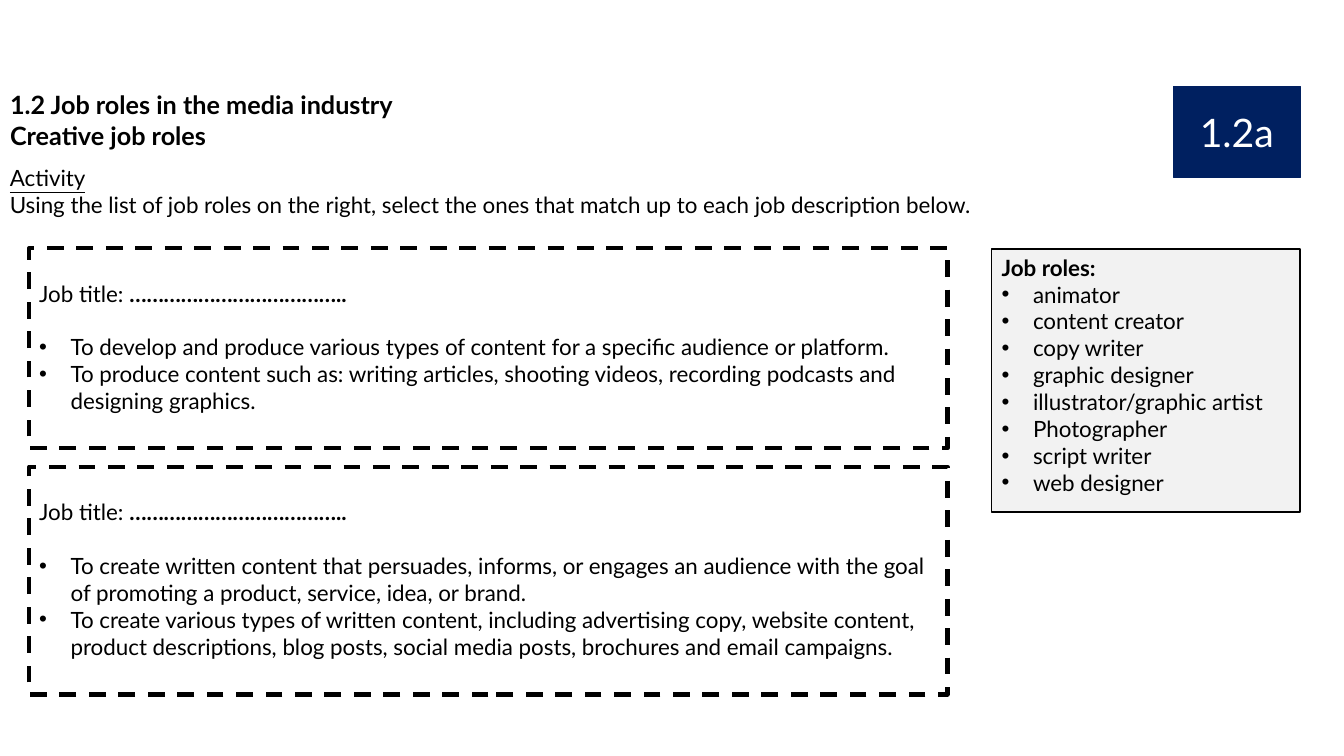
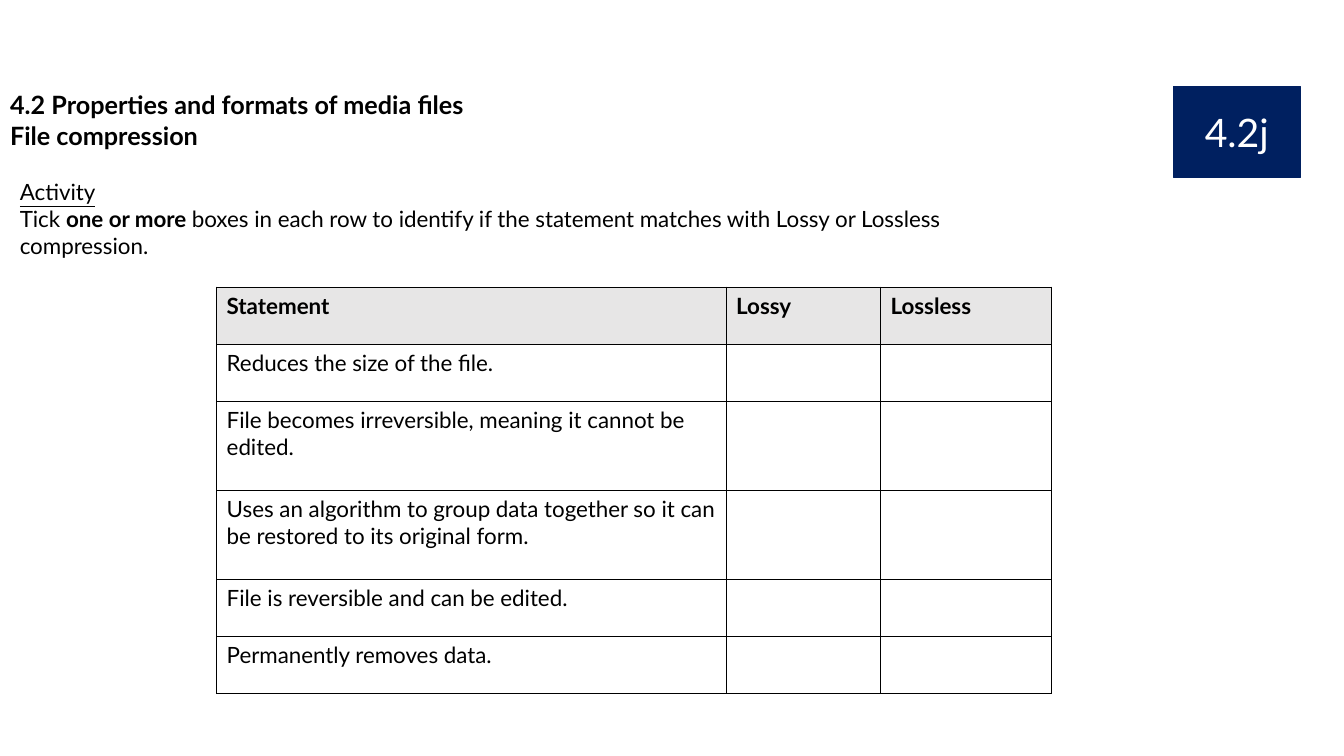
from dataclasses import dataclass

import pptx
import pptx.dml.color
import pptx.enum.dml
import pptx.enum.shapes
import pptx.enum.text
import pptx.oxml
import pptx.oxml.ns
import pptx.util
from pptx.util import Cm, Pt

RGB = pptx.dml.color.RGBColor.from_string
ALIGN = pptx.enum.text.PP_ALIGN
ANCHOR = pptx.enum.text.MSO_ANCHOR


@dataclass(frozen=True)
class Theme:
    font: str = "Lato"
    ink: str = "000000"
    paper: str = "FFFFFF"
    badge: str = "002060"
    panel: str = "F2F2F2"
    header: str = "E7E6E6"
    title_size: int = 18
    body_size: int = 16
    badge_size: int = 28
    thin: int = 1
    thick: int = 3


@dataclass(frozen=True)
class Box:
    """A region of the page, in centimetres."""
    left: float
    top: float
    width: float
    height: float

    def lengths(self):
        return Cm(self.left), Cm(self.top), Cm(self.width), Cm(self.height)


THEME = Theme()
TITLE_LAYOUT, BODY_LAYOUT = 5, 1
BADGE_BOX = Box(29.57, 2.18, 3.2, 2.29)
BULLET_INDENT = 0.79
LINE_HEIGHT = 1.2 * THEME.body_size  # points


def style_para(para, size=THEME.body_size, bold=False, color=THEME.ink, align=ALIGN.LEFT):
    para.alignment = align
    para.line_spacing = 1.0
    para.space_before = Pt(0)
    para.font.name = THEME.font
    para.font.size = Pt(size)
    para.font.bold = bold
    para.font.color.rgb = RGB(color)


def set_bullet(para, char=None):
    """Give the paragraph a hanging bullet, or none at all."""
    properties = para._p.get_or_add_pPr()
    indent = Cm(BULLET_INDENT) if char else 0
    properties.set("marL", str(indent))
    properties.set("indent", str(-indent))
    namespace = pptx.oxml.ns.nsdecls("a")
    marks = ([f'<a:buFont {namespace} typeface="Arial"/>', f'<a:buChar {namespace} char="{char}"/>']
             if char else [f"<a:buNone {namespace}/>"])
    for mark in marks:
        properties.append(pptx.oxml.parse_xml(mark))


def add_para(frame, *spans, bullet=None, **style):
    """Write one paragraph; a span is a text or a (text, bold) pair."""
    first = frame.paragraphs[0]
    para = frame.add_paragraph() if first.runs else first
    set_bullet(para, bullet)
    style_para(para, **style)
    for item in spans:
        text, bold = (item, None) if isinstance(item, str) else item
        span = para.add_run()
        span.text = text
        if bold is not None:
            span.font.bold = bold
    return para


def prepare_frame(shape, anchor=ANCHOR.TOP):
    frame = shape.text_frame
    frame.word_wrap = True
    frame.auto_size = pptx.enum.text.MSO_AUTO_SIZE.NONE
    frame.vertical_anchor = anchor
    return frame


def move(shape, box):
    shape.left, shape.top, shape.width, shape.height = box.lengths()


def outline(shape, color=THEME.ink, width=THEME.thin):
    shape.line.color.rgb = RGB(color)
    shape.line.width = Pt(width)


def add_rectangle(page, box):
    shape = page.shapes.add_shape(pptx.enum.shapes.MSO_SHAPE.RECTANGLE, *box.lengths())
    shape.shadow.inherit = False
    return shape


def add_page(deck, layout, title_lines, code, title_width):
    """Start a page with its two-line title and the topic badge."""
    page = deck.slides.add_slide(deck.slide_layouts[layout])
    move(page.shapes.title, Box(0, 2.13, title_width, 1.8))
    frame = prepare_frame(page.shapes.title)
    for line in title_lines:
        add_para(frame, line, size=THEME.title_size, bold=True)

    badge = add_rectangle(page, BADGE_BOX)
    badge.fill.solid()
    badge.fill.fore_color.rgb = RGB(THEME.badge)
    outline(badge, THEME.badge)
    add_para(prepare_frame(badge, ANCHOR.MIDDLE), code,
             size=THEME.badge_size, color=THEME.paper, align=ALIGN.CENTER)
    return page


def add_activity(page, box, *spans):
    frame = prepare_frame(page.shapes.add_textbox(*box.lengths()))
    add_para(frame, "Activity").font.underline = True
    add_para(frame, *spans)


def fill_role_list(page, box, heading, roles):
    panel = page.placeholders[1]
    move(panel, box)
    panel.fill.solid()
    panel.fill.fore_color.rgb = RGB(THEME.panel)
    outline(panel)
    frame = prepare_frame(panel)
    add_para(frame, heading, bold=True)
    for role in roles:
        add_para(frame, role, bullet="•")


def add_job_card(page, box, duties):
    card = add_rectangle(page, box)
    card.fill.background()
    outline(card, width=THEME.thick)
    card.line.dash_style = pptx.enum.dml.MSO_LINE.DASH
    frame = prepare_frame(card)
    frame.margin_top = Cm(0.8)
    heading = add_para(frame, "Job title: ", ("………………………………..", True))
    heading.space_after = Pt(LINE_HEIGHT)
    for duty in duties:
        add_para(frame, duty, bullet="•")


def style_cell(cell, fill=None):
    properties = cell._tc.get_or_add_tcPr()
    for side in ("lnL", "lnR", "lnT", "lnB"):
        properties.append(pptx.oxml.parse_xml(
            f'<a:{side} {pptx.oxml.ns.nsdecls("a")} w="{Pt(THEME.thin)}"><a:solidFill>'
            f'<a:srgbClr val="{THEME.ink}"/></a:solidFill></a:{side}>'))
    if fill:
        cell.fill.solid()
        cell.fill.fore_color.rgb = RGB(fill)
    else:
        cell.fill.background()


def add_tick_table(page, left, top, widths, heights, headings, statements):
    """Draw a heading row, then one statement per row with empty boxes to tick."""
    box = Box(left, top, sum(widths), sum(heights))
    table = page.shapes.add_table(len(heights), len(widths), *box.lengths()).table
    table.first_row = table.horz_banding = False
    for column, width in zip(table.columns, widths):
        column.width = Cm(width)
    for row, height in zip(table.rows, heights):
        row.height = Cm(height)
    for cell in table.iter_cells():
        style_cell(cell)
    for cell, heading in zip(table.rows[0].cells, headings):
        cell.fill.solid()
        cell.fill.fore_color.rgb = RGB(THEME.header)
        add_para(cell.text_frame, heading, bold=True)
    for number, statement in enumerate(statements, start=1):
        add_para(table.cell(number, 0).text_frame, statement)


def add_job_roles_page(deck):
    page = add_page(deck, BODY_LAYOUT,
                    ["1.2 Job roles in the media industry", "Creative job roles"], "1.2a", 17.02)
    add_activity(page, Box(0, 4.01, 30, 1.63),
                 "Using the list of job roles on the right, select the ones that match up "
                 "to each job description below.")
    fill_role_list(page, Box(24.99, 6.27, 7.77, 6.63), "Job roles:", [
        "animator", "content creator", "copy writer", "graphic designer",
        "illustrator/graphic artist", "Photographer", "script writer", "web designer"])
    add_job_card(page, Box(0.74, 6.25, 23.14, 5.05), [
        "To develop and produce various types of content for a specific audience or platform.",
        "To produce content such as: writing articles, shooting videos, recording podcasts "
        "and designing graphics."])
    add_job_card(page, Box(0.74, 11.76, 23.14, 5.74), [
        "To create written content that persuades, informs, or engages an audience with the "
        "goal of promoting a product, service, idea, or brand.",
        "To create various types of written content, including advertising copy, website "
        "content, product descriptions, blog posts, social media posts, brochures and "
        "email campaigns."])


def add_compression_page(deck):
    page = add_page(deck, TITLE_LAYOUT,
                    ["4.2 Properties and formats of media files", "File compression"], "4.2j", 26.49)
    add_activity(page, Box(0.25, 4.37, 26.49, 2.31),
                 "Tick ", ("one or more ", True),
                 "boxes in each row to identify if the statement matches with Lossy or "
                 "Lossless compression.")
    short, tall = 1.44, 2.24
    add_tick_table(page, 5.46, 7.24, [12.84, 3.89, 4.31],
                   [short, short, tall, tall, short, short],
                   ["Statement", "Lossy", "Lossless"],
                   ["Reduces the size of the file.",
                    "File becomes irreversible, meaning it cannot be edited.",
                    "Uses an algorithm to group data together so it can be restored to its "
                    "original form.",
                    "File is reversible and can be edited.",
                    "Permanently removes data."])


def main():
    deck = pptx.Presentation()
    deck.slide_width, deck.slide_height = Cm(33.87), Cm(19.05)
    add_job_roles_page(deck)
    add_compression_page(deck)
    deck.save("out.pptx")


if __name__ == "__main__":
    main()
